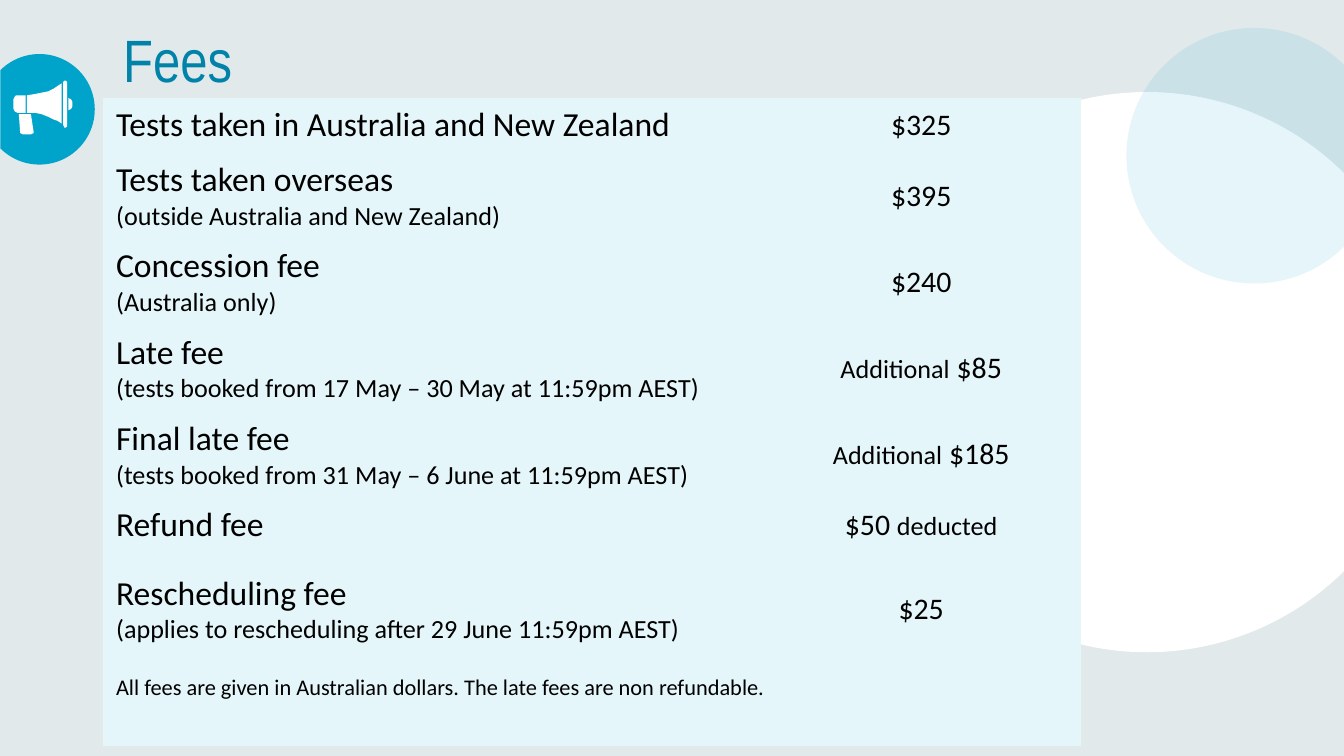
"""Build the slide that lists the test fees."""
from pptx import Presentation, util as u
from pptx.dml import color
from pptx.enum import shapes, text
from pptx.oxml import ns
from lxml import etree

HUES = {"back": "E1E9EB", "white": "FFFFFF", "cyan": "00A4CA",
        "title": "0082A9", "cell": "E5F6FA", "ink": "000000"}
FEES = [
    ("Tests taken in Australia and New Zealand", "", [("$325", 16)], 1.04),
    ("Tests taken overseas", "(outside Australia and New Zealand)",
     [("$395", 16)], 1.63),
    ("Concession fee", "(Australia only)", [("$240", 16)], 1.63),
    ("Late fee", "(tests booked from 17 May – 30 May at 11:59pm AEST)",
     [("Additional", 14), (" $85", 16)], 1.63),
    ("Final late fee", "(tests booked from 31 May – 6 June at 11:59pm AEST)",
     [("Additional", 14), (" $185", 16)], 1.63),
    ("Refund fee", "", [("$50 ", 16), ("deducted", 14)], 1.04),
    ("Rescheduling fee", "(applies to rescheduling after 29 June 11:59pm AEST)",
     [("$25", 16)], 2.14),
]
NOTE = "All fees are given in Australian dollars. The late fees are non refundable."
COLS = [12.45, 6.04]
DISCS = [(16.38, 1.74, 10.59, "white", 100, 0),
         (21.29, 0.53, 4.83, "cyan", 10, 0),
         (-0.3, 1.02, 2.09, "cyan", 100, 180)]
HORN = [
    [(14, 85), (15, 99), (17, 100), (23, 100), (25, 99), (25, 98), (23, 85)],
    [(51, 73), (51, 82), (53, 81), (54, 79), (54, 76), (53, 74)],
    [(19, 71), (14, 71), (12, 71), (11, 72), (10, 74), (10, 81),
     (11, 83), (13, 84), (19, 84)],
    [(46, 62), (43, 64), (40, 66), (36, 68), (31, 69), (26, 70), (20, 71),
     (20, 84), (26, 84), (31, 85), (36, 87), (40, 89), (43, 90), (46, 92)],
    [(48, 60), (47, 61), (47, 93), (48, 95), (49, 95), (50, 94), (50, 61),
     (49, 60)],
]


def tint(name):
    return color.RGBColor.from_string(HUES[name])


def apply(obj, form):
    for key, val in form.items():
        setattr(obj, key, val)


def paint(shape, hue, alpha=100):
    shape.shadow.inherit = False
    shape.fill.solid()
    shape.fill.fore_color.rgb = tint(hue)
    shape.line.fill.background()
    if alpha < 100:
        node = shape.fill._xPr.find(".//" + ns.qn("a:srgbClr"))
        etree.SubElement(node, ns.qn("a:alpha"), val=str(alpha * 1000))


def write(para, words, size, face="Calibri", hue="ink"):
    run = para.add_run()
    run.text = words
    apply(run.font, {"size": u.Pt(size), "name": face, "bold": False})
    run.font.color.rgb = tint(hue)


def draw_discs(slide):
    for left, top, size, hue, alpha, turn in DISCS:
        disc = slide.shapes.add_shape(shapes.MSO_SHAPE.CHORD, u.Cm(left), u.Cm(top),
                                      u.Cm(size), u.Cm(size))
        disc.adjustments[0], disc.adjustments[1] = 27, 189
        disc.rotation = turn
        paint(disc, hue, alpha)


def draw_horn(slide):
    group = slide.shapes.add_group_shape()
    for dots in HORN:
        pen = group.shapes.build_freeform(*dots[0], scale=u.Cm(0.0254))
        pen.add_line_segments(dots[1:], close=True)
        paint(pen.convert_to_shape(), "white")


def add_title(slide):
    box = slide.shapes.add_textbox(u.Cm(2.33), u.Cm(0.53), u.Cm(18.34), u.Cm(1.32))
    frame = box.text_frame
    apply(frame, {"word_wrap": True, "vertical_anchor": text.MSO_ANCHOR.MIDDLE,
                  "margin_left": 0, "margin_right": 0,
                  "margin_top": 0, "margin_bottom": 0})
    para = frame.paragraphs[0]
    para.line_spacing = 0.9
    write(para, "Fees", 32, "Arial Narrow", "title")


def add_fees(slide):
    tall = [row[3] for row in FEES] + [1.52]
    frame = slide.shapes.add_table(len(tall), 2, u.Cm(1.94), u.Cm(1.85),
                                   u.Cm(sum(COLS)), u.Cm(sum(tall)))
    grid = frame.table
    apply(grid, {"first_row": False, "horz_banding": False})
    style = grid._tbl.tblPr.find(ns.qn("a:tableStyleId"))
    style.text = "{2D5ABB26-0587-4C30-8999-92F81FD0307C}"
    for col, wide in zip(grid.columns, COLS):
        col.width = u.Cm(wide)
    for row, high in zip(grid.rows, tall):
        row.height = u.Cm(high)
        for cell in row.cells:
            cell.vertical_anchor = text.MSO_ANCHOR.MIDDLE
            cell.fill.solid()
            cell.fill.fore_color.rgb = tint("cell")
    for num, (name, note, price, _) in enumerate(FEES):
        left, right = [grid.cell(num, c).text_frame.paragraphs[0] for c in (0, 1)]
        write(left, name, 18)
        if note:
            left.add_line_break()
            write(left, note, 14)
        right.alignment = text.PP_ALIGN.CENTER
        for words, size in price:
            write(right, words, size)
    last = grid.cell(len(FEES), 0)
    last.merge(grid.cell(len(FEES), 1))
    apply(last, {"vertical_anchor": text.MSO_ANCHOR.TOP, "margin_top": u.Cm(0.15)})
    write(last.text_frame.paragraphs[0], NOTE, 12)


def main():
    deck = Presentation()
    apply(deck, {"slide_width": u.Cm(25.4), "slide_height": u.Cm(14.29)})
    slide = deck.slides.add_slide(deck.slide_layouts[6])
    slide.background.fill.solid()
    slide.background.fill.fore_color.rgb = tint("back")
    draw_discs(slide)
    add_title(slide)
    draw_horn(slide)
    add_fees(slide)
    deck.save("out.pptx")


if __name__ == "__main__":
    main()
